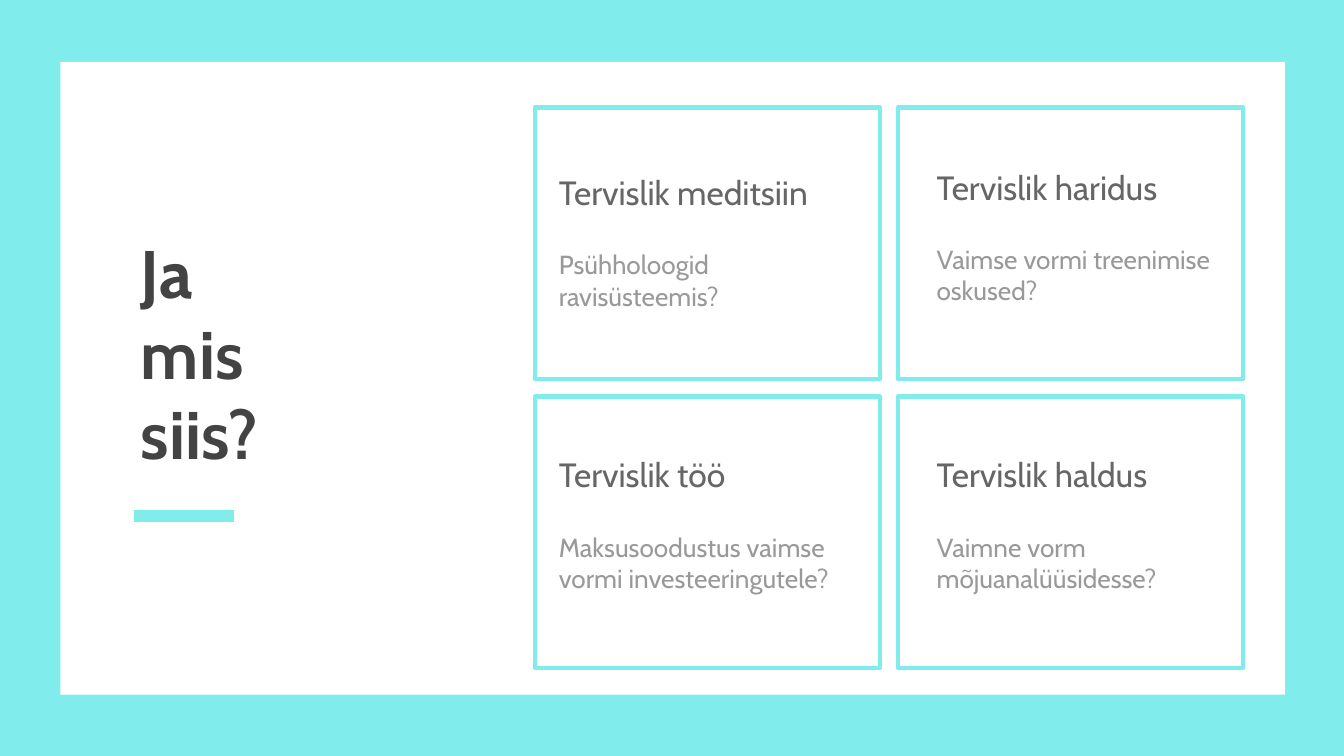
from lxml import etree
from pptx import Presentation
from pptx import util as u
from pptx.dml.color import RGBColor
from pptx.enum import shapes, text
from pptx.oxml.ns import qn

AQUA = "81ECEC"
WHITE = "FFFFFF"
DARK = "434343"
GREY = "666666"
LIGHT = "999999"


def colour(value):
    return RGBColor.from_string(value)


class SlideBuilder:
    font = "Cabin"
    inset = u.Inches(0.1)

    def __init__(self, slide):
        self.slide = slide

    def background(self, fill):
        self.slide.background.fill.solid()
        self.slide.background.fill.fore_color.rgb = colour(fill)

    def box(self, left, top, width, height, fill=None, line=None):
        box = self.slide.shapes.add_shape(
            shapes.MSO_SHAPE.RECTANGLE, *map(u.Inches, (left, top, width, height)))
        box.shadow.inherit = False
        if fill:
            box.fill.solid()
            box.fill.fore_color.rgb = colour(fill)
        else:
            box.fill.background()
        if line:
            box.line.color.rgb = colour(line)
            box.line.width = u.Pt(2.25)
            etree.SubElement(box.line._get_or_add_ln(), qn("a:round"))
        else:
            box.line.fill.background()

    def rule(self, left, top, right, line):
        rule = self.slide.shapes.add_connector(
            shapes.MSO_CONNECTOR.STRAIGHT,
            u.Inches(left), u.Inches(top), u.Inches(right), u.Inches(top))
        rule.line.color.rgb = colour(line)
        rule.line.width = u.Pt(6)
        etree.SubElement(rule._element.spPr, qn("a:effectLst"))

    def text(self, left, top, width, height, lines, anchor=text.MSO_ANCHOR.TOP, gap=0):
        box = self.slide.shapes.add_textbox(*map(u.Inches, (left, top, width, height)))
        frame = box.text_frame
        frame.word_wrap = True
        frame.vertical_anchor = anchor
        frame.margin_left = frame.margin_right = self.inset
        frame.margin_top = frame.margin_bottom = self.inset
        frame.text = "\n".join(words for words, *_ in lines)
        for para, (_, size, shade, bold) in zip(frame.paragraphs, lines):
            for span in para.runs:
                span.font.name = self.font
                span.font.size = u.Pt(size)
                span.font.bold = bold
                span.font.color.rgb = colour(shade)
        frame.paragraphs[0].space_after = u.Pt(gap)


def main():
    deck = Presentation()
    deck.slide_width = u.Inches(10)
    deck.slide_height = deck.slide_width * 9 // 16
    page = SlideBuilder(deck.slides.add_slide(deck.slide_layouts[6]))

    page.background(AQUA)
    page.box(0.45, 0.46, 9.11, 4.71, fill=WHITE)
    page.rule(1, 3.84, 1.74, AQUA)

    for top in (0.8, 2.95):
        for left in (3.98, 6.68):
            page.box(left, top, 2.57, 2.02, line=AQUA)

    topics = [
        (4.06, 1.18, 2.37, "Tervislik meditsiin", "Psühholoogid ravisüsteemis?"),
        (6.87, 1.14, 2.27, "Tervislik haridus", "Vaimse vormi treenimise oskused?"),
        (4.06, 3.28, 2.3, "Tervislik töö", "Maksusoodustus vaimse vormi investeeringutele?"),
        (6.87, 3.28, 2.18, "Tervislik haldus", "Vaimne vorm mõjuanalüüsidesse?"),
    ]
    for left, top, width, heading, question in topics:
        lines = [(heading, 18, GREY, False), (question, 14, LIGHT, False)]
        page.text(left, top, width, 1.24, lines, gap=19.5)

    page.text(0.95, 1.71, 1.21, 1.82, [("Ja mis siis?", 36, DARK, True)],
              anchor=text.MSO_ANCHOR.MIDDLE)

    deck.save("out.pptx")


if __name__ == "__main__":
    main()
